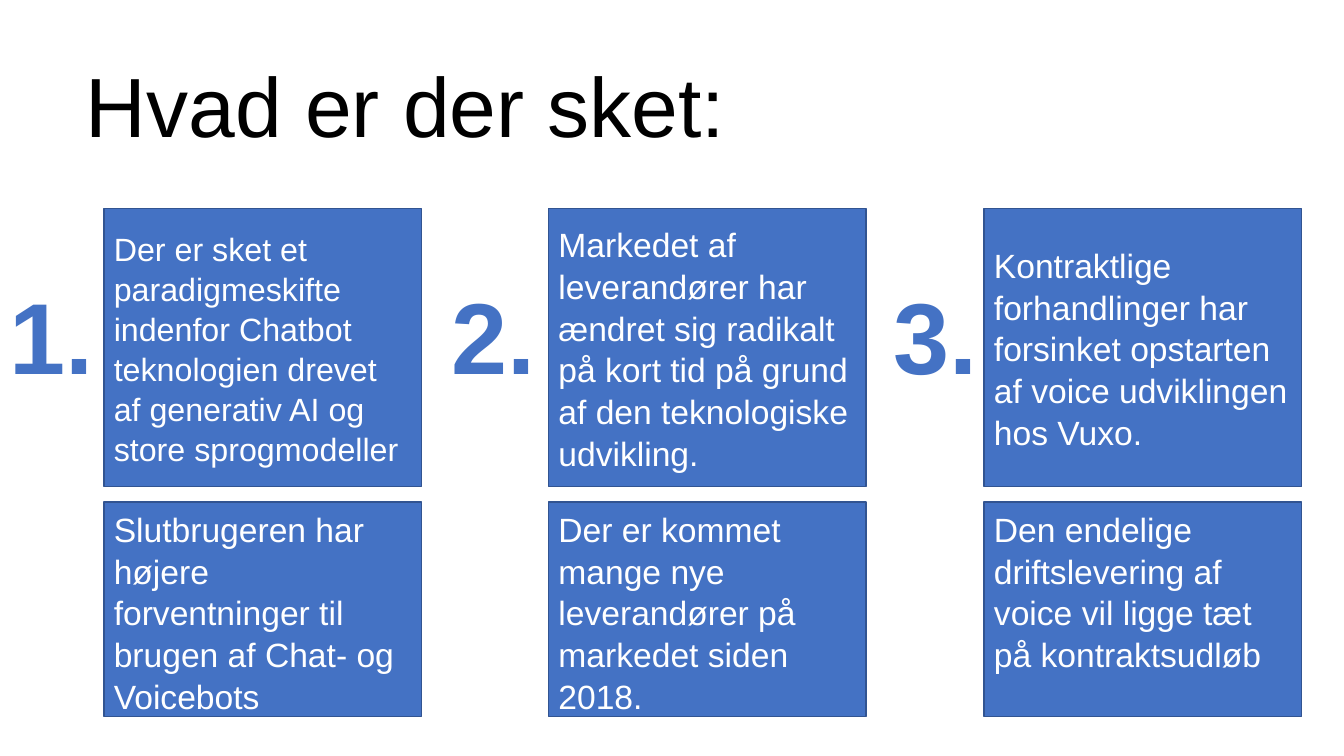
from pptx import Presentation
from pptx.dml.color import RGBColor
from pptx.enum.shapes import MSO_SHAPE
from pptx.enum.text import MSO_ANCHOR, PP_ALIGN
from pptx.util import Inches, Pt

RECTANGLE = MSO_SHAPE.RECTANGLE
TOP, MIDDLE = MSO_ANCHOR.TOP, MSO_ANCHOR.MIDDLE
LEFT = PP_ALIGN.LEFT

COLORS = {"blue": "4472C4", "border": "325491", "white": "FFFFFF", "black": "000000"}
FONT = "Arial"
TITLE_ONLY = 5
CARD_WIDTH = 3.15

COLUMNS = [
    {
        "number_left": 0,
        "card_left": 1.03,
        "upper": "Der er sket et paradigmeskifte indenfor Chatbot teknologien "
                 "drevet af generativ AI og store sprogmodeller",
        "upper_size": 23,
        "lower": "Slutbrugeren har højere forventninger til brugen af Chat- og Voicebots",
    },
    {
        "number_left": 4.38,
        "card_left": 5.44,
        "upper": "Markedet af leverandører har ændret sig radikalt på kort tid "
                 "på grund af den teknologiske udvikling.",
        "upper_size": 24,
        "lower": "Der er kommet mange nye leverandører på markedet siden 2018.",
    },
    {
        "number_left": 8.76,
        "card_left": 9.76,
        "upper": "Kontraktlige forhandlinger har forsinket opstarten af voice "
                 "udviklingen hos Vuxo.",
        "upper_size": 24,
        "lower": "Den endelige driftslevering af voice vil ligge tæt på kontraktsudløb",
    },
]


def color(name):
    return RGBColor.from_string(COLORS[name])


def write_text(shape, text, size, color_name, anchor=TOP, bold=False):
    frame = shape.text_frame
    frame.word_wrap = True
    frame.vertical_anchor = anchor
    frame.text = text
    paragraph = frame.paragraphs[0]
    paragraph.alignment = LEFT
    font = paragraph.font
    font.name = FONT
    font.size = Pt(size)
    font.bold = bold
    font.color.rgb = color(color_name)
    return paragraph


def add_title(slide, left, top, width, height):
    title = slide.shapes.title
    title.left, title.top = Inches(left), Inches(top)
    title.width, title.height = Inches(width), Inches(height)
    write_text(title, "Hvad er der sket:", 60, "black")
    title.text_frame.margin_top = Inches(0.14)


def add_number(slide, number, left, top, width, height):
    box = slide.shapes.add_textbox(Inches(left), Inches(top), Inches(width), Inches(height))
    write_text(box, f"{number}.", 72, "blue", bold=True)


def add_card(slide, text, size, anchor, left, top, width, height):
    card = slide.shapes.add_shape(
        RECTANGLE, Inches(left), Inches(top), Inches(width), Inches(height)
    )
    card.shadow.inherit = False
    card.fill.solid()
    card.fill.fore_color.rgb = color("blue")
    card.line.color.rgb = color("border")
    card.line.width = Pt(1)
    paragraph = write_text(card, text, size, "white", anchor)
    paragraph.line_spacing = 1.04


def add_column(slide, number, column, top):
    left = column["card_left"]
    add_number(slide, number, column["number_left"], top + 0.6, 1.24, 1.25)
    add_card(slide, column["upper"], column["upper_size"], MIDDLE,
             left, top, CARD_WIDTH, 2.76)
    add_card(slide, column["lower"], 24, TOP, left, top + 2.91, CARD_WIDTH, 2.13)


def main():
    presentation = Presentation()
    presentation.slide_width = Inches(13.33)
    presentation.slide_height = Inches(7.5)
    slide = presentation.slides.add_slide(presentation.slide_layouts[TITLE_ONLY])
    add_title(slide, 0.75, 0.39, 8.2, 1.11)
    for number, column in enumerate(COLUMNS, start=1):
        add_column(slide, number, column, 2.07)
    presentation.save("out.pptx")


if __name__ == "__main__":
    main()
